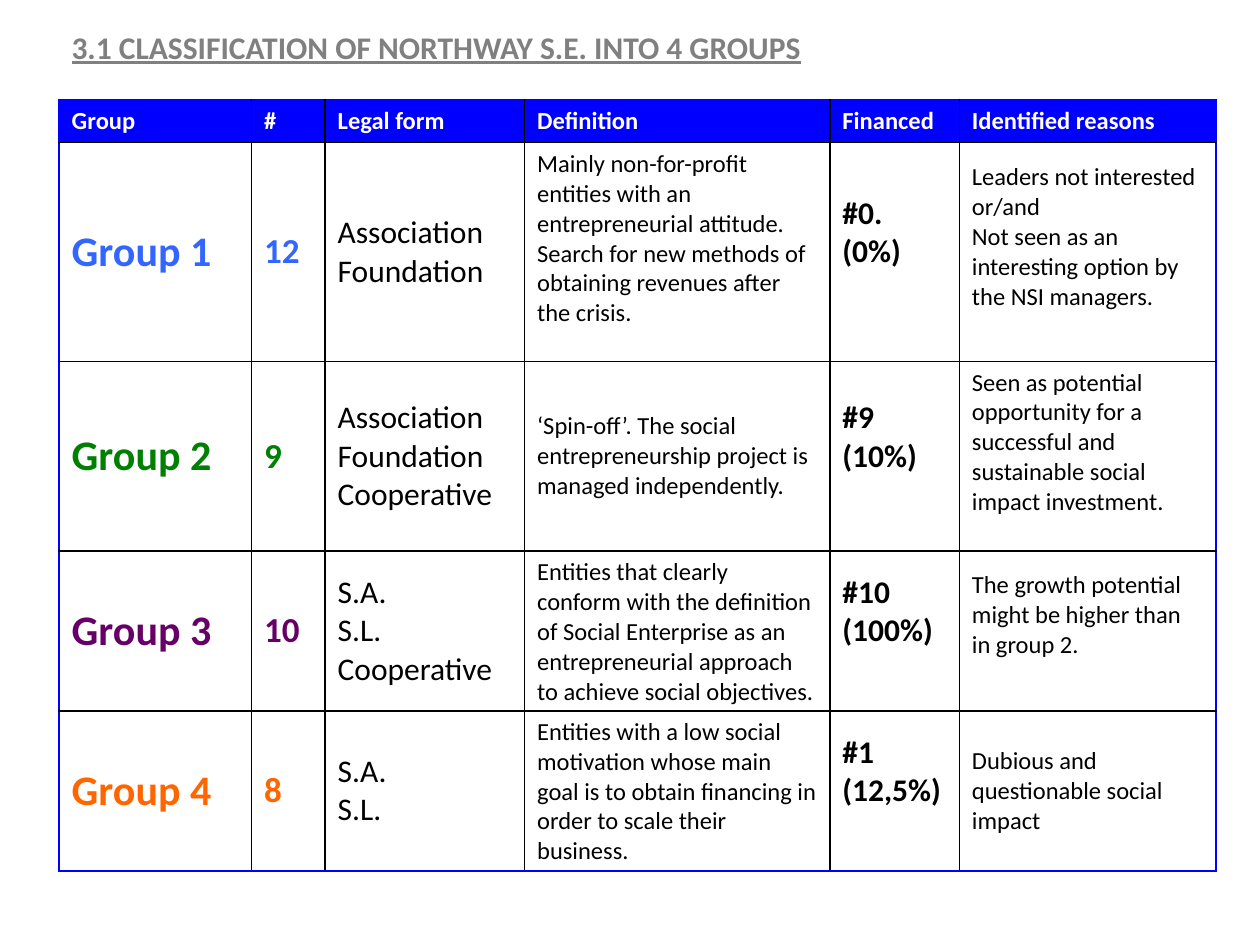
from lxml.etree import SubElement
from pptx import Presentation
from pptx.dml.color import RGBColor as RGB
from pptx.enum.text import MSO_ANCHOR as ANCHOR, MSO_AUTO_SIZE as AUTO
from pptx.oxml.ns import qn
from pptx.util import Pt

C = {"title": "808080", "blue": "0000FF", "white": "FFFFFF", "black": "000000",
     "g1": "3366FF", "g2": "008000", "g3": "660066", "g4": "FF6600"}
COLS = [110, 42, 114, 174.5, 74, 146.5]
ROWS = [24.5, 125, 108.5, 91, 91.5]
SIZES = [24, 20, 18, 14, 18, 14]
BOLD = [True, True, False, False, True, False]
HEADER = ["Group", "#", "Legal form", "Definition", "Financed", "Identified reasons"]
GROUPS = [
    ["Group 1", "12", "Association\nFoundation",
     "Mainly non-for-profit entities with an entrepreneurial attitude.\n"
     "Search for new methods of obtaining revenues after the crisis.",
     "#0.\n(0%)",
     "Leaders not interested or/and\nNot seen as an interesting option by the NSI managers."],
    ["Group 2", "9", "Association\nFoundation\nCooperative",
     "‘Spin-off’. The social entrepreneurship project is managed independently.",
     "#9\n(10%)",
     "Seen as potential opportunity for a successful and sustainable social impact investment."],
    ["Group 3", "10", "S.A.\nS.L.\nCooperative",
     "Entities that clearly conform with the definition of Social Enterprise as an "
     "entrepreneurial approach to achieve social objectives.",
     "#10\n(100%)", "The growth potential might be higher than in group 2."],
    ["Group 4", "8", "S.A.\nS.L.",
     "Entities with a low social motivation whose main goal is to obtain financing in "
     "order to scale their business.",
     "#1\n(12,5%)", "Dubious and questionable social impact"],
]
RAISED = {(1, 3): 15, (1, 5): 17, (2, 5): 16, (3, 5): 18,
          **{(row, 4): 22 for row in range(1, 5)}}


def write(tf, text, color, **fmt):
    """Fill a text frame with one paragraph per line in a single format."""
    tf.text = text
    for p in tf.paragraphs:
        for r in p.runs:
            r.font.color.rgb = RGB.from_string(C[color])
            for name, value in {"name": "Calibri", **fmt}.items():
                setattr(r.font, name, value)


def set_borders(cell, outer):
    """Draw blue lines on the outer sides of a cell and black ones inside."""
    tc_pr = cell._tc.get_or_add_tcPr()
    for i, side in enumerate(("L", "R", "T", "B")):
        color, width = ("blue", 1.5) if side in outer else ("black", 1)
        ln = SubElement(tc_pr, qn(f"a:ln{side}"), w=str(Pt(width)))
        SubElement(SubElement(ln, qn("a:solidFill")), qn("a:srgbClr"), val=C[color])
        tc_pr.insert(i, ln)


def add_title(s, x, y, w, h):
    """Place the underlined slide title."""
    tf = s.shapes.add_textbox(Pt(x), Pt(y), Pt(w), Pt(h)).text_frame
    tf.word_wrap = False
    tf.auto_size = AUTO.SHAPE_TO_FIT_TEXT
    write(tf, "3.1 CLASSIFICATION OF NORTHWAY S.E. INTO 4 GROUPS", "title",
          size=Pt(18), bold=True, underline=True)


def style_cell(cell, row, col, text):
    """Format one cell by its place in the table."""
    cell.vertical_anchor = ANCHOR.MIDDLE
    cell.margin_bottom = Pt(3.6 + RAISED.get((row, col), 0))
    if row == 0:
        cell.fill.solid()
        cell.fill.fore_color.rgb = RGB.from_string(C["blue"])
        write(cell.text_frame, text, "white", size=Pt(14), bold=True)
    else:
        cell.fill.background()
        write(cell.text_frame, text, f"g{row}" if col < 2 else "black",
              size=Pt(SIZES[col]), bold=BOLD[col])
    edges = {"L": col == 0, "R": col == len(COLS) - 1,
             "T": row == 0, "B": row == len(ROWS) - 1}
    set_borders(cell, [side for side, is_edge in edges.items() if is_edge])


def add_groups_table(s, x, y):
    """Place the table of the four groups."""
    table = s.shapes.add_table(len(ROWS), len(COLS), Pt(x), Pt(y),
                               Pt(sum(COLS)), Pt(sum(ROWS))).table
    table.first_row = table.horz_banding = False
    for column, width in zip(table.columns, COLS):
        column.width = Pt(width)
    for row, height in zip(table.rows, ROWS):
        row.height = Pt(height)
    for i, texts in enumerate([HEADER, *GROUPS]):
        for j, text in enumerate(texts):
            style_cell(table.cell(i, j), i, j, text)


def main():
    """Build the slide and save it."""
    prs = Presentation()
    prs.slide_width, prs.slide_height = Pt(720), Pt(540)
    s = prs.slides.add_slide(prs.slide_layouts[6])
    add_title(s, 33.8, 12.5, 503, 29)
    add_groups_table(s, 33.8, 57)
    prs.save("out.pptx")


if __name__ == "__main__":
    main()
